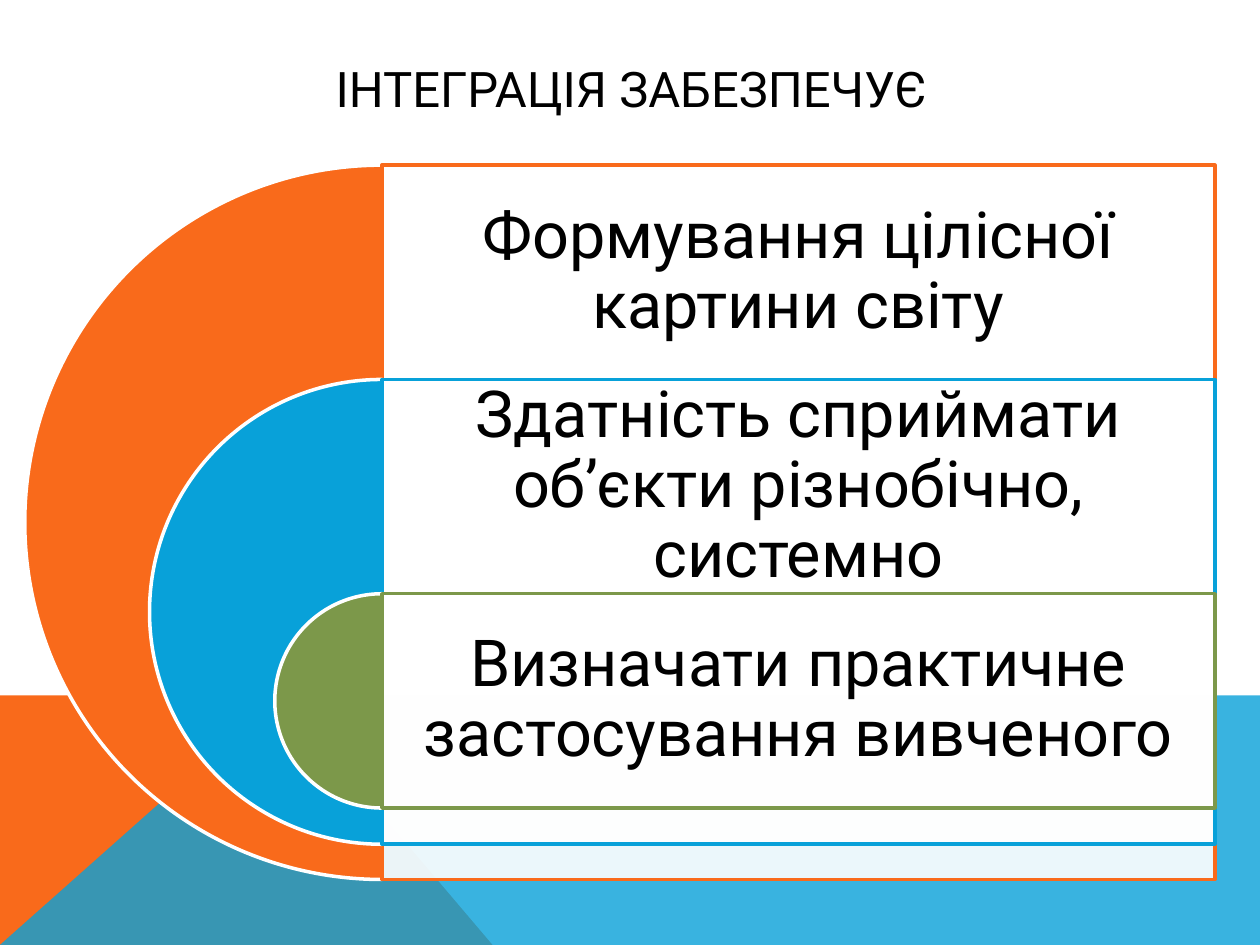
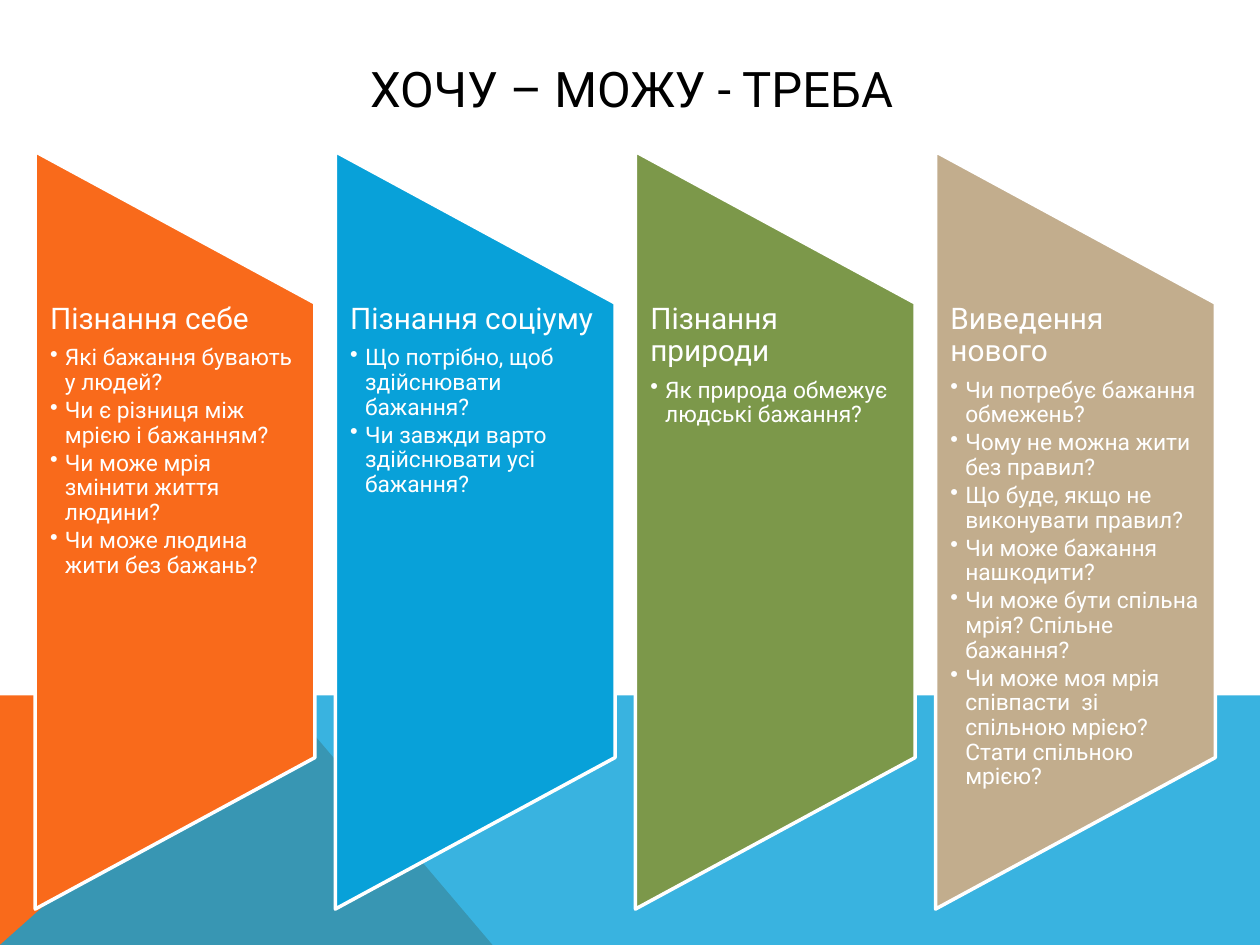
import dataclasses

import lxml.etree
import pptx
import pptx.dml.color
import pptx.enum.shapes
import pptx.enum.text
import pptx.oxml.ns
import pptx.util

Cm = pptx.util.Cm
Pt = pptx.util.Pt
Shape = pptx.enum.shapes.MSO_SHAPE
Anchor = pptx.enum.text.MSO_ANCHOR
Align = pptx.enum.text.PP_ALIGN
qn = pptx.oxml.ns.qn


@dataclasses.dataclass(frozen=True)
class Theme:
    font: str = "Roboto"
    black: str = "000000"
    white: str = "FFFFFF"
    orange: str = "F96A1B"
    blue: str = "08A1D9"
    green: str = "7C984A"
    sand: str = "C2AD8D"
    title_size: int = 28
    statement_size: int = 37
    heading_size: int = 17
    question_size: int = 13
    outline: int = 2


theme = Theme()


def paint(shape, fill, line=None, opacity=100):
    """Give a shape a flat fill and an optional outline."""
    shape.shadow.inherit = False
    shape.fill.solid()
    shape.fill.fore_color.rgb = pptx.dml.color.RGBColor.from_string(fill)
    if opacity < 100:
        color = shape.fill._xPr.find(".//" + qn("a:srgbClr"))
        lxml.etree.SubElement(color, qn("a:alpha"), val=str(opacity * 1000))
    if line:
        shape.line.color.rgb = pptx.dml.color.RGBColor.from_string(line)
        shape.line.width = Pt(theme.outline)
    else:
        shape.line.fill.background()


def write(page, place, lines, color, align, anchor, inset_x, inset_y, spacing=0.9):
    """Add a text box; each line is (text, size, space after, bulleted)."""
    box = page.shapes.add_textbox(*(Cm(length) for length in place))
    frame = box.text_frame
    frame.word_wrap = True
    frame.vertical_anchor = anchor
    frame.margin_left = frame.margin_right = Cm(inset_x)
    frame.margin_top = frame.margin_bottom = Cm(inset_y)
    for number, (text, size, after, bulleted) in enumerate(lines):
        para = frame.paragraphs[0] if number == 0 else frame.add_paragraph()
        para.text = text
        para.alignment = align
        para.line_spacing = spacing
        para.space_after = Pt(after)
        para.font.name = theme.font
        para.font.size = Pt(size)
        para.font.color.rgb = pptx.dml.color.RGBColor.from_string(color)
        if bulleted:
            para.level = 1
            properties = para._p.get_or_add_pPr()
            properties.set("marL", str(Cm(0.3)))
            properties.set("indent", str(-Cm(0.3)))
            bullet = lxml.etree.Element(qn("a:buChar"), char="•")
            properties.find(qn("a:defRPr")).addprevious(bullet)


deck = pptx.Presentation()
page_width, page_height = 25.4, 19.05
deck.slide_width = Cm(page_width)
deck.slide_height = Cm(page_height)

# Shared bands and title
band_top = 14.02
ridge = 5.66
bands = [
    ([(0, page_height), (0, band_top), (ridge, band_top), (9.93, page_height)],
     theme.orange, 100),
    ([(0, page_height), (ridge, band_top), (page_width, band_top),
      (page_width, page_height)], theme.blue, 80),
]
pages = []
for title in ("ІНТЕГРАЦІЯ ЗАБЕЗПЕЧУЄ", "ХОЧУ – МОЖУ - ТРЕБА"):
    page = deck.slides.add_slide(deck.slide_layouts[6])
    for corners, color, opacity in bands:
        points = [(Cm(x), Cm(y)) for x, y in corners]
        builder = page.shapes.build_freeform(*points[0])
        builder.add_line_segments(points[1:], close=True)
        paint(builder.convert_to_shape(), color, opacity=opacity)
    write(page, (2.29, 1.02, 20.88, 1.52), [(title, theme.title_size, 0, False)],
          theme.black, Align.CENTER, Anchor.MIDDLE, 0.25, 0.13, spacing=1)
    pages.append(page)
benefits_page, questions_page = pages

# Nested half circles, each with a framed statement
benefits = [
    ("Формування цілісної картини світу", theme.orange, 14.4),
    ("Здатність сприймати об’єкти різнобічно, системно", theme.blue, 9.37),
    ("Визначати практичне застосування вивченого", theme.green, 4.32),
]
axis, first_top, row_height, frame_width = 7.7, 3.33, 4.32, 16.79
for row, (statement, color, diameter) in enumerate(benefits):
    top = first_top + row * row_height
    half_circle = benefits_page.shapes.add_shape(
        Shape.PIE, Cm(axis - diameter / 2), Cm(top), Cm(diameter), Cm(diameter))
    half_circle.adjustments[0] = 54
    half_circle.adjustments[1] = 162
    paint(half_circle, color, theme.white)
    panel = benefits_page.shapes.add_shape(
        Shape.RECTANGLE, Cm(axis), Cm(top), Cm(frame_width), Cm(diameter))
    paint(panel, theme.white, color, opacity=90)
    write(benefits_page, (axis, top, frame_width, row_height),
          [(statement, theme.statement_size, 0, False)],
          theme.black, Align.CENTER, Anchor.MIDDLE, 0.38, 0.38)

# Four upright panels with questions
topics = [
    ("Пізнання себе", theme.orange, [
        "Які бажання бувають у людей?",
        "Чи є різниця між мрією і бажанням?",
        "Чи може мрія змінити життя людини?",
        "Чи може людина жити без бажань?",
    ]),
    ("Пізнання соціуму", theme.blue, [
        "Що потрібно, щоб здійснювати бажання?",
        "Чи завжди варто здійснювати усі бажання?",
    ]),
    ("Пізнання природи", theme.green, [
        "Як природа обмежує людські бажання?",
    ]),
    ("Виведення нового", theme.sand, [
        "Чи потребує бажання обмежень?",
        "Чому не можна жити без правил?",
        "Що буде, якщо не виконувати правил?",
        "Чи може бажання нашкодити?",
        "Чи може бути спільна мрія? Спільне бажання?",
        "Чи може моя мрія співпасти  зі спільною мрією? Стати спільною мрією?",
    ]),
]
panel_length, panel_width = 15.27, 5.64
first_left, pitch, middle = 0.71, 6.05, 10.69
for column, (heading, color, questions) in enumerate(topics):
    left = first_left + column * pitch
    panel = questions_page.shapes.add_shape(
        Shape.FLOWCHART_MANUAL_OPERATION,
        Cm(left + (panel_width - panel_length) / 2), Cm(middle - panel_width / 2),
        Cm(panel_length), Cm(panel_width))
    panel.rotation = 270
    paint(panel, color, theme.white)
    lines = [(heading, theme.heading_size, 6, False)]
    lines += [(question, theme.question_size, 2, True) for question in questions]
    write(questions_page, (left, 6.12, panel_width, 9.17), lines,
          theme.white, Align.LEFT, Anchor.TOP, 0.3, 0)

deck.save("out.pptx")
